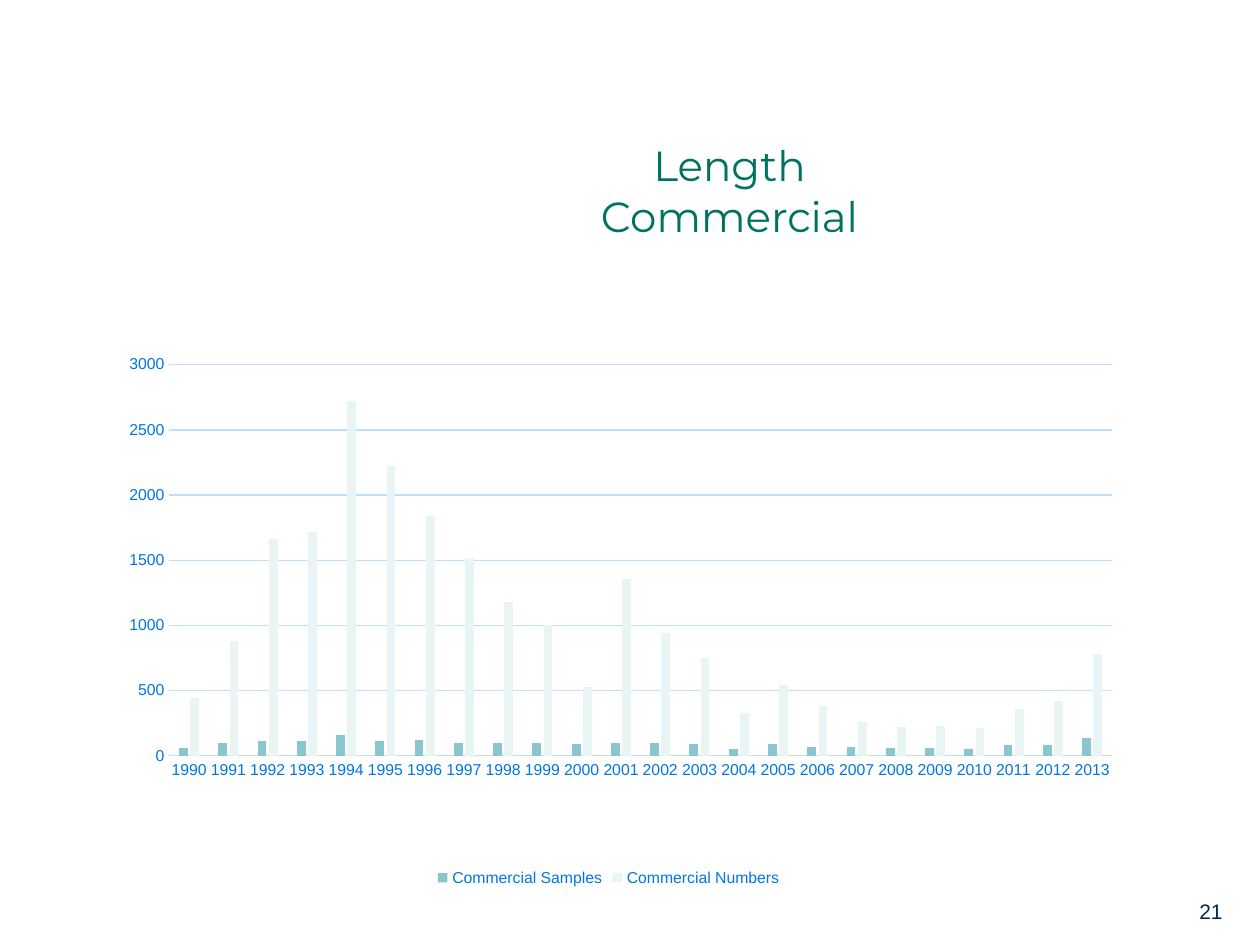
from dataclasses import dataclass

from lxml import etree
from pptx import Presentation
from pptx import util as u
from pptx.chart.data import CategoryChartData
from pptx.dml.color import RGBColor
from pptx.enum import chart as ch
from pptx.enum import text

GREEN = RGBColor(0x00, 0x72, 0x62)
NAVY = RGBColor(0x00, 0x29, 0x50)
BLUE = RGBColor(0x00, 0x76, 0xE6)
PALE_BLUE = RGBColor(0xBE, 0xE0, 0xFF)
TEAL = RGBColor(0x8A, 0xC6, 0xCD)
PALE_TEAL = RGBColor(0xE9, 0xF4, 0xF5)
CHART_NS = "http://schemas.openxmlformats.org/drawingml/2006/chart"


@dataclass
class Measure:
    name: str
    color: RGBColor
    values: list[int]


YEARS = [str(year) for year in range(1990, 2014)]
MEASURES = [
    Measure("Commercial Samples", TEAL,
            [60, 100, 110, 110, 160, 110, 120, 100, 100, 100, 90, 100,
             100, 90, 50, 90, 70, 70, 60, 60, 50, 80, 80, 140]),
    Measure("Commercial Numbers", PALE_TEAL,
            [440, 880, 1660, 1720, 2720, 2220, 1840, 1520, 1180, 1000, 530, 1360,
             940, 750, 330, 540, 380, 260, 220, 230, 210, 360, 420, 780]),
]


def set_font(font, name: str, size: float, color: RGBColor) -> None:
    font.name = name
    font.size = u.Pt(size)
    font.bold = False
    font.color.rgb = color


def set_line(line, color: RGBColor) -> None:
    line.color.rgb = color
    line.width = u.Pt(0.75)


def add_title(page) -> None:
    title = page.shapes.title
    title.left, title.top = u.Inches(2.5), u.Inches(1.25)
    title.width, title.height = u.Inches(6.58), u.Inches(0.92)
    frame = title.text_frame
    frame.auto_size = text.MSO_AUTO_SIZE.NONE
    frame.vertical_anchor = text.MSO_ANCHOR.MIDDLE
    para = frame.paragraphs[0]
    para.alignment = text.PP_ALIGN.CENTER
    set_font(para.font, "Montserrat", 24, GREEN)
    for line in ("Length", "Commercial"):
        span = para.add_run()
        span.text = line
        set_font(span.font, "Montserrat", 24, GREEN)
        para.add_line_break()


def add_page_number(page) -> None:
    box = page.shapes.add_textbox(u.Inches(9.42), u.Inches(7.08),
                                  u.Inches(0.83), u.Inches(0.3))
    box.text_frame.word_wrap = True
    span = box.text_frame.paragraphs[0].add_run()
    span.text = "21"
    set_font(span.font, "Arial", 12, NAVY)


def style_axis(axis) -> None:
    axis.major_tick_mark = ch.XL_TICK_MARK.NONE
    axis.minor_tick_mark = ch.XL_TICK_MARK.NONE
    set_font(axis.tick_labels.font, "Arial", 9, BLUE)


def place_plot(chart, x: float, y: float, w: float, h: float) -> None:
    area = chart.element.find(f".//{{{CHART_NS}}}plotArea")
    for old in area.findall(f"{{{CHART_NS}}}layout"):
        area.remove(old)
    layout = etree.Element(f"{{{CHART_NS}}}layout")
    manual = etree.SubElement(layout, f"{{{CHART_NS}}}manualLayout")
    settings = [("layoutTarget", "inner"), ("xMode", "edge"), ("yMode", "edge"),
                ("x", x), ("y", y), ("w", w), ("h", h)]
    for tag, value in settings:
        etree.SubElement(manual, f"{{{CHART_NS}}}{tag}").set("val", str(value))
    area.insert(0, layout)


def add_length_chart(page) -> None:
    data = CategoryChartData()
    data.categories = YEARS
    for measure in MEASURES:
        data.add_series(measure.name, measure.values)
    chart = page.shapes.add_chart(
        ch.XL_CHART_TYPE.COLUMN_CLUSTERED, u.Inches(0.58), u.Inches(2.58),
        u.Inches(8.5), u.Inches(4.5), data).chart
    chart.has_title = False
    set_font(chart.font, "Arial", 10, NAVY)

    plot = chart.plots[0]
    plot.vary_by_categories = False
    plot.gap_width = 219
    plot.overlap = -27
    for series, measure in zip(plot.series, MEASURES):
        series.format.fill.solid()
        series.format.fill.fore_color.rgb = measure.color

    years, counts = chart.category_axis, chart.value_axis
    style_axis(years)
    style_axis(counts)
    set_line(years.format.line, PALE_BLUE)
    counts.format.line.fill.background()
    counts.minimum_scale, counts.maximum_scale, counts.major_unit = 0, 3000, 500
    counts.has_major_gridlines = True
    set_line(counts.major_gridlines.format.line, PALE_BLUE)

    chart.has_legend = True
    chart.legend.position = ch.XL_LEGEND_POSITION.BOTTOM
    chart.legend.include_in_layout = False
    set_font(chart.legend.font, "Arial", 9, BLUE)
    place_plot(chart, 0.09, 0.07, 0.88, 0.69)


def main() -> None:
    deck = Presentation()
    deck.slide_width, deck.slide_height = u.Inches(10), u.Inches(7.5)
    page = deck.slides.add_slide(deck.slide_layouts[5])
    add_page_number(page)
    add_title(page)
    add_length_chart(page)
    deck.save("out.pptx")


if __name__ == "__main__":
    main()
